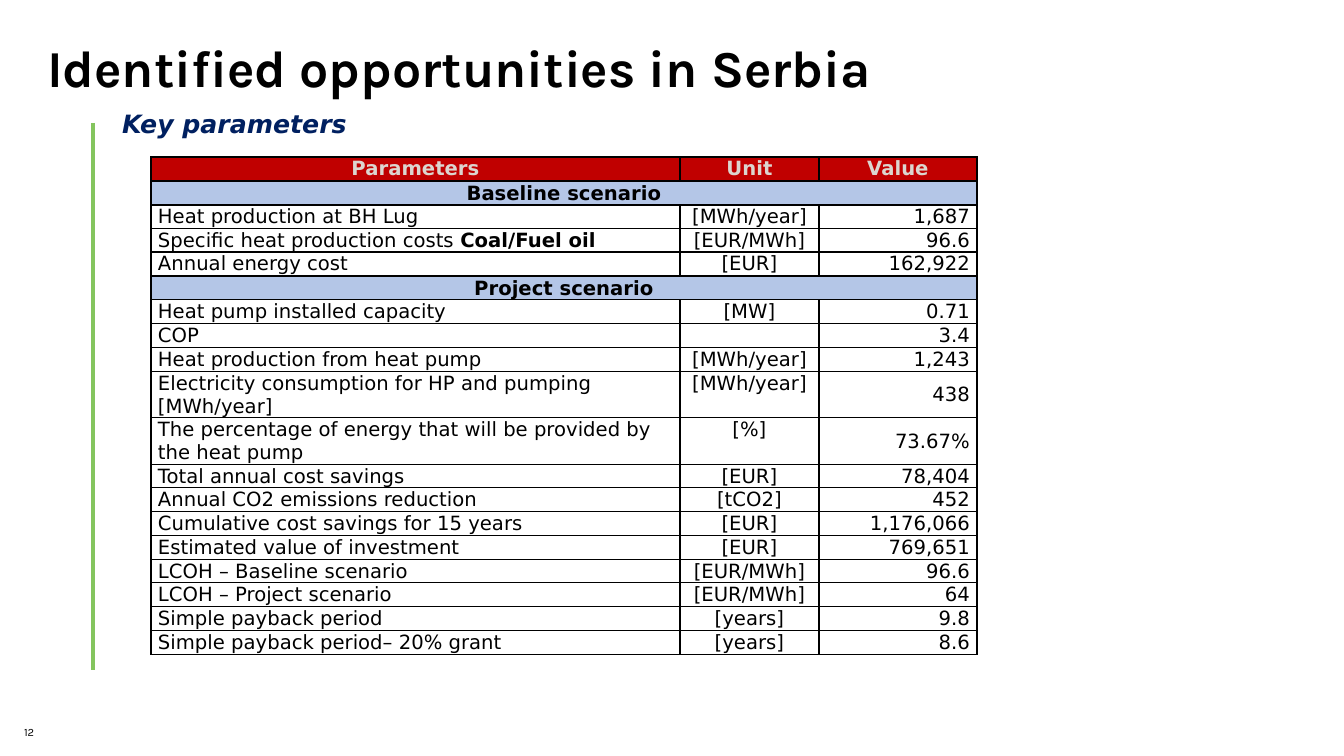
"""Build the slide on identified heat pump opportunities in Serbia."""
from dataclasses import dataclass

from lxml.etree import SubElement
from pptx import Presentation
from pptx.dml.color import RGBColor
from pptx.enum.shapes import MSO_CONNECTOR
from pptx.enum.text import MSO_ANCHOR, MSO_AUTO_SIZE, PP_ALIGN
from pptx.oxml.ns import qn
from pptx.slide import Slide
from pptx.table import _Cell
from pptx.text.text import TextFrame, _Paragraph
from pptx.util import Emu, Pt


@dataclass(frozen=True)
class Theme:
    heading_font: str = "Karla"
    body_font: str = "DejaVu Sans"
    black: str = "000000"
    navy: str = "002060"
    green: str = "84C55E"
    red: str = "C00000"
    pale_blue: str = "B4C6E7"
    cream: str = "DCD5CF"
    title_size: int = 37
    subtitle_size: int = 18
    table_size: int = 14
    number_size: int = 8
    rule_width: float = 2.25
    border_width: int = 1


THEME = Theme()


@dataclass(frozen=True)
class Span:
    text: str
    size: int = THEME.table_size
    font: str = THEME.body_font
    color: str = THEME.black
    bold: bool = False
    italic: bool = False


@dataclass(frozen=True)
class Box:
    left: int
    top: int
    width: int
    height: int

    def emu(self) -> tuple[Emu, Emu, Emu, Emu]:
        return px(self.left), px(self.top), px(self.width), px(self.height)


@dataclass(frozen=True)
class Parameter:
    name: str
    unit: str
    value: str
    emphasis: str = ""
    height: int = 0


@dataclass(frozen=True)
class Section:
    name: str
    parameters: tuple[Parameter, ...]


TITLE_BOX = Box(39, 39, 1265, 69)
NUMBER_BOX = Box(14, 703, 56, 40)
SUBTITLE_BOX = Box(114, 108, 602, 512)
TABLE_BOX = Box(151, 157, 826, 497)
COLUMN_WIDTHS = (529, 139, 158)
COLUMN_ALIGNMENTS = (PP_ALIGN.LEFT, PP_ALIGN.CENTER, PP_ALIGN.RIGHT)
COLUMN_ANCHORS = (MSO_ANCHOR.MIDDLE, MSO_ANCHOR.TOP, MSO_ANCHOR.MIDDLE)
HEADINGS = ("Parameters", "Unit", "Value")
SECTIONS = (
    Section("Baseline scenario", (
        Parameter("Heat production at BH Lug", "[MWh/year]", "1,687"),
        Parameter("Specific heat production costs ", "[EUR/MWh]", "96.6", "Coal/Fuel oil"),
        Parameter("Annual energy cost", "[EUR]", "162,922"),
    )),
    Section("Project scenario", (
        Parameter("Heat pump installed capacity", "[MW]", "0.71"),
        Parameter("COP", "", "3.4"),
        Parameter("Heat production from heat pump", "[MWh/year]", "1,243"),
        Parameter("Electricity consumption for HP and pumping [MWh/year]",
                  "[MWh/year]", "438", height=46),
        Parameter("The percentage of energy that will be provided by the heat pump",
                  "[%]", "73.67%", height=47),
        Parameter("Total annual cost savings", "[EUR]", "78,404"),
        Parameter("Annual CO2 emissions reduction", "[tCO2]", "452"),
        Parameter("Cumulative cost savings for 15 years", "[EUR]", "1,176,066"),
        Parameter("Estimated value of investment", "[EUR]", "769,651"),
        Parameter("LCOH – Baseline scenario", "[EUR/MWh]", "96.6"),
        Parameter("LCOH – Project scenario", "[EUR/MWh]", "64"),
        Parameter("Simple payback period", "[years]", "9.8"),
        Parameter("Simple payback period– 20% grant", "[years]", "8.6"),
    )),
)


def px(length: int) -> Emu:
    return Emu(round(length * 914400 / 100.8))


def add_span(para: _Paragraph, span: Span) -> None:
    run = para.add_run()
    run.text = span.text
    run.font.name = span.font
    run.font.size = Pt(span.size)
    run.font.bold = span.bold
    run.font.italic = span.italic
    run.font.color.rgb = RGBColor.from_string(span.color)


def set_text(frame: TextFrame, span: Span, anchor: MSO_ANCHOR = MSO_ANCHOR.TOP) -> _Paragraph:
    frame.word_wrap = True
    frame.auto_size = MSO_AUTO_SIZE.NONE
    frame.vertical_anchor = anchor
    frame.margin_left = frame.margin_right = px(8)
    frame.margin_top = frame.margin_bottom = px(4)
    para = frame.paragraphs[0]
    para.alignment = PP_ALIGN.LEFT
    add_span(para, span)
    return para


def add_title(slide: Slide) -> None:
    title = slide.shapes.title
    title.left, title.top, title.width, title.height = TITLE_BOX.emu()
    para = set_text(title.text_frame, Span("Identified opportunities in Serbia", THEME.title_size,
                                           THEME.heading_font, bold=True))
    para.line_spacing = 0.9
    para.space_before = Pt(0)


def add_rule(slide: Slide) -> None:
    rule = slide.shapes.add_connector(MSO_CONNECTOR.STRAIGHT, px(93), px(123), px(93), px(670))
    rule.line.color.rgb = RGBColor.from_string(THEME.green)
    rule.line.width = Pt(THEME.rule_width)
    SubElement(rule._element.spPr, qn("a:effectLst"))


def fill_cell(cell: _Cell, spans: tuple[Span, ...], alignment: PP_ALIGN,
              anchor: MSO_ANCHOR, fill: str = "") -> None:
    cell.margin_left = cell.margin_right = px(7)
    cell.margin_top = cell.margin_bottom = 0
    cell.vertical_anchor = anchor
    properties = cell._tc.get_or_add_tcPr()
    for side in ("a:lnL", "a:lnR", "a:lnT", "a:lnB"):
        border = SubElement(properties, qn(side), w=str(Pt(THEME.border_width)))
        SubElement(SubElement(border, qn("a:solidFill")), qn("a:srgbClr"), val=THEME.black)
    if fill:
        cell.fill.solid()
        cell.fill.fore_color.rgb = RGBColor.from_string(fill)
    else:
        cell.fill.background()
    para = cell.text_frame.paragraphs[0]
    para.alignment = alignment
    for span in spans:
        if span.text:
            add_span(para, span)
    if not para.runs:
        SubElement(para._p, qn("a:endParaRPr"), sz=str(THEME.table_size * 100))


def add_parameter_table(slide: Slide) -> None:
    entries = [entry for section in SECTIONS for entry in (section, *section.parameters)]
    table = slide.shapes.add_table(len(entries) + 1, len(HEADINGS), *TABLE_BOX.emu()).table
    table.first_row = table.horz_banding = False
    for column, width in zip(table.columns, COLUMN_WIDTHS):
        column.width = px(width)
    for index, row in enumerate(table.rows):
        row.height = px(23 if index % 4 == 3 else 24)
    for column, heading in enumerate(HEADINGS):
        span = Span(heading, color=THEME.cream, bold=True)
        fill_cell(table.cell(0, column), (span,), PP_ALIGN.CENTER, COLUMN_ANCHORS[column], THEME.red)
    for index, entry in enumerate(entries, 1):
        cells = [table.cell(index, column) for column in range(len(HEADINGS))]
        if isinstance(entry, Section):
            contents = ((Span(entry.name, bold=True),), (), ())
            for cell, spans in zip(cells, contents):
                fill_cell(cell, spans, PP_ALIGN.CENTER, MSO_ANCHOR.BOTTOM, THEME.pale_blue)
            cells[0].merge(cells[-1])
            continue
        if entry.height:
            table.rows[index].height = px(entry.height)
        contents = ((Span(entry.name), Span(entry.emphasis, bold=True)),
                    (Span(entry.unit),), (Span(entry.value),))
        for cell, spans, alignment, anchor in zip(cells, contents, COLUMN_ALIGNMENTS, COLUMN_ANCHORS):
            fill_cell(cell, spans, alignment, anchor)


def main() -> None:
    deck = Presentation()
    deck.slide_width, deck.slide_height = px(1344), px(756)
    page = deck.slides.add_slide(deck.slide_layouts[5])
    add_title(page)
    number = page.shapes.add_textbox(*NUMBER_BOX.emu())
    set_text(number.text_frame, Span("12", THEME.number_size, THEME.heading_font), MSO_ANCHOR.BOTTOM)
    number.text_frame.margin_left = px(10)
    subtitle = page.shapes.add_textbox(*SUBTITLE_BOX.emu())
    para = set_text(subtitle.text_frame, Span("Key parameters", THEME.subtitle_size,
                                              color=THEME.navy, bold=True, italic=True))
    para.line_spacing = 0.9
    add_rule(page)
    add_parameter_table(page)
    deck.save("out.pptx")


if __name__ == "__main__":
    main()
